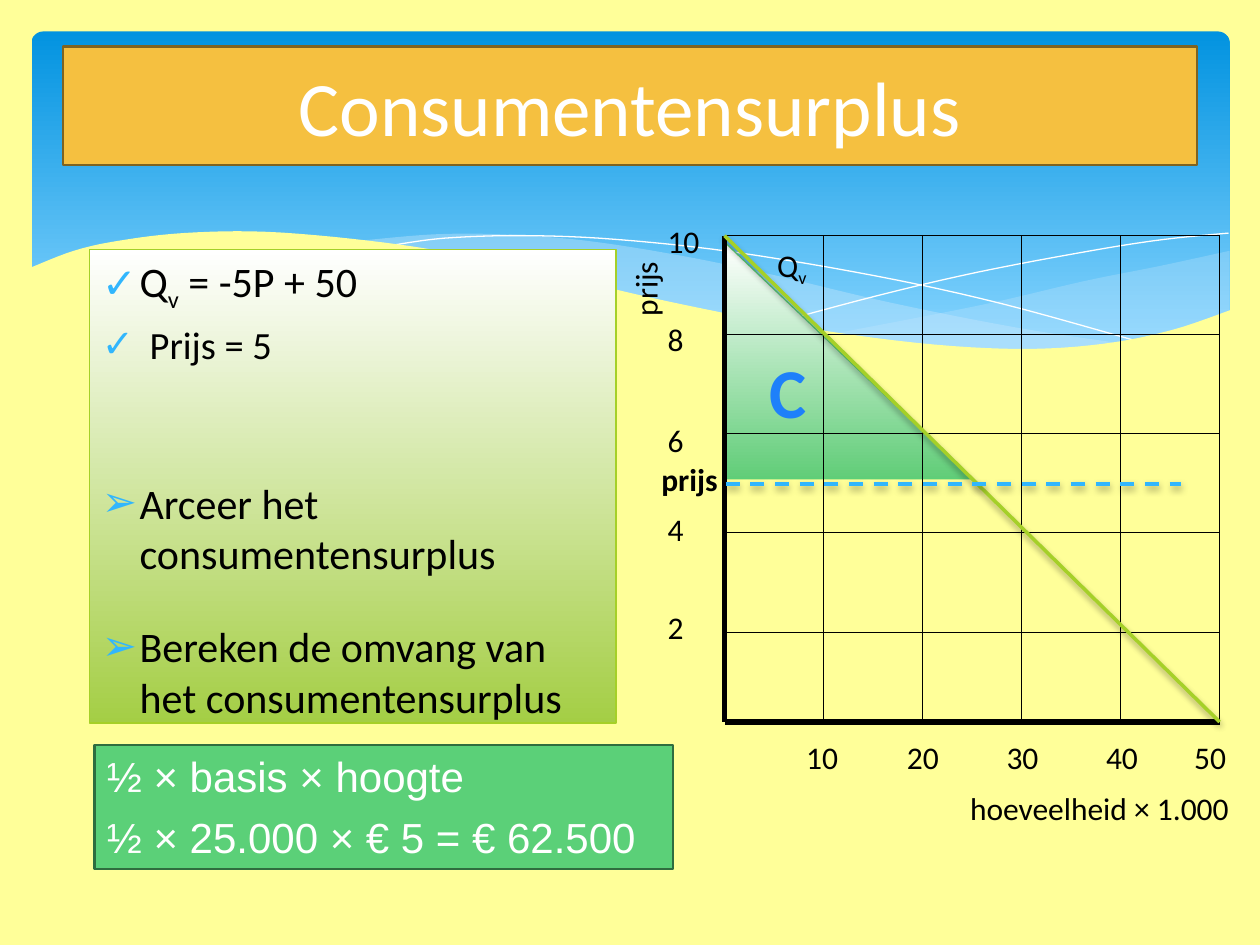
import pptx
import pptx.dml.color
import pptx.enum.dml
import pptx.enum.shapes
import pptx.enum.text
import pptx.oxml
import pptx.oxml.ns
import pptx.util

COLS, ROWS = 100, 75
BLACK, WHITE, SAND, SKY = "000000", "FFFFFF", "FFFF99", "31B6FD"
LIME, MINT = "A5D028", "5BD078"
SHAPE = pptx.enum.shapes.MSO_SHAPE
DASH = pptx.enum.dml.MSO_LINE
ALIGN = pptx.enum.text.PP_ALIGN
ANCHOR = pptx.enum.text.MSO_ANCHOR
qn = pptx.oxml.ns.qn


def rgb(value):
    return pptx.dml.color.RGBColor.from_string(value)


def child(parent, tag, **attrs):
    el = parent.makeelement(qn(tag), attrs)
    parent.append(el)
    return el


def smooth(points, steps=6):
    padded = [points[0], *points, points[-1]]
    curve = [points[0]]
    for a, b, c, d in zip(padded, padded[1:], padded[2:], padded[3:]):
        for i in range(1, steps + 1):
            t = i / steps
            curve.append(tuple(
                (2 * q + (r - p) * t + (2 * p - 5 * q + 4 * r - u) * t ** 2
                 + (3 * q - p - 3 * r + u) * t ** 3) / 2
                for p, q, r, u in zip(a, b, c, d)))
    return curve


class Board:
    def __init__(self, prs, font="Calibri", size=18):
        self.prs, self.font, self.size = prs, font, size
        self.slide = prs.slides.add_slide(prs.slide_layouts[6])
        self.shapes = self.slide.shapes

    def background(self, color):
        self.paint(self.slide.background.fill, color)

    def x(self, cols):
        return pptx.util.Emu(round(self.prs.slide_width * cols / COLS))

    def y(self, rows):
        return pptx.util.Emu(round(self.prs.slide_height * rows / ROWS))

    def box(self, left, top, width, height):
        return self.x(left), self.y(top), self.x(width), self.y(height)

    def paint(self, fill, color, alpha=None):
        if color is None:
            fill.background()
        elif isinstance(color, str):
            fill.solid()
            fill.fore_color.rgb = rgb(color)
        else:
            fill.gradient()
            fill.gradient_angle = 270
            for stop, (position, value) in zip(fill.gradient_stops, color):
                stop.position = position
                stop.color.rgb = rgb(value)
        if alpha:
            clr = fill._xPr.find(qn("a:solidFill"))[0]
            child(clr, "a:alpha", val=str(alpha * 1000))

    def finish(self, sp, fill, line, width, alpha=None):
        sp.shadow.inherit = False
        self.paint(sp.fill, fill, alpha)
        self.paint(sp.line.fill, line)
        if line:
            sp.line.width = pptx.util.Pt(width)

    def shape(self, kind, at, fill, line=None, width=1, adj=None, anchor=ANCHOR.TOP):
        sp = self.shapes.add_shape(kind, *self.box(*at))
        if adj is not None:
            sp.adjustments[0] = adj
        self.finish(sp, fill, line, width)
        sp.text_frame.word_wrap = True
        sp.text_frame.vertical_anchor = anchor
        return sp.text_frame

    def wave(self, curves, fill=None, line=None, alpha=None):
        points = [(self.x(px), self.y(py)) for c in curves for px, py in smooth(c)]
        builder = self.shapes.build_freeform(*points[0])
        builder.add_line_segments(points[1:], close=fill is not None)
        self.finish(builder.convert_to_shape(), fill, line, 0, alpha)

    def line(self, x1, y1, x2, y2, color=BLACK, width=0.25, dash=None, shadow=False):
        ln = self.shapes.add_connector(
            pptx.enum.shapes.MSO_CONNECTOR.STRAIGHT,
            self.x(x1), self.y(y1), self.x(x2), self.y(y2))
        ln.line.color.rgb = rgb(color)
        ln.line.width = pptx.util.Pt(width)
        if dash:
            ln.line.dash_style = dash
        effects = child(ln._element.spPr, "a:effectLst")
        if shadow:
            outer = child(effects, "a:outerShdw", blurRad="50800", dist="25400",
                          dir="5400000", rotWithShape="0")
            child(child(outer, "a:srgbClr", val=BLACK), "a:alpha", val="38000")

    def para(self, tf, *runs, size=None, color=BLACK, font=None, bold=False, spacing=None,
             align=ALIGN.LEFT, before=0, after=0, bullet=None, indent=0.3):
        first = tf.paragraphs[0]
        p = tf.add_paragraph() if first.runs else first
        p.alignment = align
        p.space_before, p.space_after = pptx.util.Pt(before), pptx.util.Pt(after)
        if bullet:
            pPr = p._p.get_or_add_pPr()
            hang = pptx.util.Inches(indent)
            pPr.set("marL", str(hang))
            pPr.set("indent", str(-hang))
            child(child(pPr, "a:buClr"), "a:srgbClr", val=SKY)
            child(pPr, "a:buFont", typeface="Arial")
            child(pPr, "a:buChar", char=bullet)
        for i, text in enumerate(runs):
            r = p.add_run()
            r.text = text
            r.font.name = font or self.font
            r.font.size = pptx.util.Pt(size or self.size)
            r.font.bold = bold
            self.paint(r.font.fill, color)
            if i == 1:
                r.font._element.set("baseline", "-25000")
            if spacing:
                r.font._element.set("spc", str(spacing))

    def label(self, at, *runs, rotation=0, **style):
        sp = self.shapes.add_textbox(*self.box(*at))
        sp.rotation = rotation
        sp.text_frame.word_wrap = False
        self.para(sp.text_frame, *runs, **style)


def draw_waves(s):
    s.shape(SHAPE.ROUNDED_RECTANGLE, (2.5, 2.5, 95.1, 27),
            [(0, "0293E0"), (0.9, "83D3FE")], adj=0.034)
    s.wave([[(97.6, 19.9), (92.1, 21.1), (86.1, 22.3), (77.9, 24.2), (66.1, 26.5)],
            [(66.1, 26.5), (73.2, 27.4), (80.3, 27.8), (87.2, 27.4), (92.8, 26.3),
             (97.6, 24.7)]], "C6E7FC", alpha=29)
    s.wave([[(89.3, 27.3), (80.7, 26), (70.6, 24), (61.3, 21.8), (54.1, 20.3),
             (46.5, 19.1), (39.9, 18.6), (34.4, 18.6), (28.6, 19.1)],
            [(28.6, 19.1), (36.2, 20.3), (44.9, 22.2), (56.6, 24.8), (66.5, 26.6),
             (74.8, 27.6), (81.8, 27.8), (89.3, 27.3)]], "C6E7FC", alpha=40)
    s.wave([[(30.9, 19.5), (35.3, 18.9), (41.6, 18.7), (48.9, 19), (58.2, 20),
             (69.5, 21.9), (79.5, 24.1), (90.7, 27.2)]], line=WHITE)
    s.wave([[(61.3, 25.7), (69.5, 23.5), (77.6, 21.6), (86.6, 19.9), (92.4, 19),
             (97.5, 18.5)]], line=WHITE)
    s.wave([[(97.7, 24.6), (93, 26.2), (87.5, 27.3), (80.9, 27.7), (72.6, 27.2),
             (62.6, 25.8), (52.9, 23.9), (44.7, 22), (36.5, 20.2), (29.2, 19.1),
             (21.1, 18.4), (14.6, 18.5), (9.5, 19.1), (5.9, 19.9), (2.3, 21.3)],
            [(2.3, 21.3), (2.3, 32.9)], [(2.3, 32.9), (97.7, 32.9)]], SAND)


def draw_text_panels(s):
    tf = s.shape(SHAPE.RECTANGLE, (5, 3.7, 90, 9.4), "F5C040", "7F6320", 1.25,
                 anchor=ANCHOR.MIDDLE)
    s.para(tf, "Consumentensurplus", size=44, color=WHITE, align=ALIGN.CENTER)
    tf = s.shape(SHAPE.RECTANGLE, (7.1, 19.8, 41.8, 37.6),
                 [(0, WHITE), (1, "A4CE45")], LIME, 0.75)
    s.para(tf, "Q", "v", " = -5P + 50", size=24, bullet="✓")
    s.para(tf, "Prijs = 5", size=22, before=4.4, bullet="✓", indent=0.38)
    for verb, gap in (("Arceer het", 63), ("Bereken de omvang van het", 24.5)):
        s.para(tf, f"{verb} consumentensurplus", size=24, before=gap, bullet="➢")


def draw_axes(s, left, top, right, bottom):
    step = (right - left) / 5
    s.line(left, top, left, bottom, width=3)
    s.line(right, bottom, left, bottom, width=3)
    for i in range(5):
        row, col = top + i * step, left + (i + 1) * step
        s.line(left, row, right, row, dash=DASH.ROUND_DOT)
        s.line(col, top, col, bottom, dash=DASH.ROUND_DOT)
    s.label((76, 62.1, 22.8, 4), "hoeveelheid × 1.000")
    s.label((48, 20.9, 6.4, 4), "prijs", rotation=270)
    for price, row in zip((10, 8, 6, 4, 2), (17.1, 24.9, 32.9, 40, 47.8)):
        s.label((52, row, 4.6 if price == 10 else 3.3, 4), str(price))
    for amount, col in zip(range(10, 60, 10), (63, 71, 78.9, 86.8, 93.8)):
        s.label((col, 58.1, 4.6, 4), str(amount))


def main():
    prs = pptx.Presentation()
    prs.slide_width, prs.slide_height = pptx.util.Inches(10), pptx.util.Inches(7.5)
    s = Board(prs)
    s.background(SAND)
    draw_waves(s)
    s.shape(SHAPE.RIGHT_TRIANGLE, (57.6, 19.3, 19.6, 18.7),
            [(0, WHITE), (1, "61CD78")], MINT, 0.75)
    draw_text_panels(s)
    left, top, right, bottom = 57.5, 18.7, 96.8, 57.3
    draw_axes(s, left, top, right, bottom)
    s.line(left, top, right, bottom, LIME, 2, shadow=True)
    s.label((60.7, 19, 4.5, 4), "Q", "v")
    s.line(57.6, 38.4, 93.7, 38.4, SKY, 2, DASH.DASH, shadow=True)
    s.label((51.5, 36, 6.5, 4), "prijs", bold=True)
    tf = s.shape(SHAPE.RECTANGLE, (7.5, 59.1, 45.9, 9.9), MINT, "2F6D3F", 1.25)
    for text in ("½ × basis × hoogte", "½ × 25.000 × € 5 = € 62.500"):
        s.para(tf, text, size=24, color=WHITE, font="Arial", after=6)
    s.label((60.1, 27.2, 5.1, 7.7), "C", size=40, bold=True, spacing=50,
            color=[(0.25, "1E80FA"), (1, "105AB6")])
    prs.save("out.pptx")


if __name__ == "__main__":
    main()
